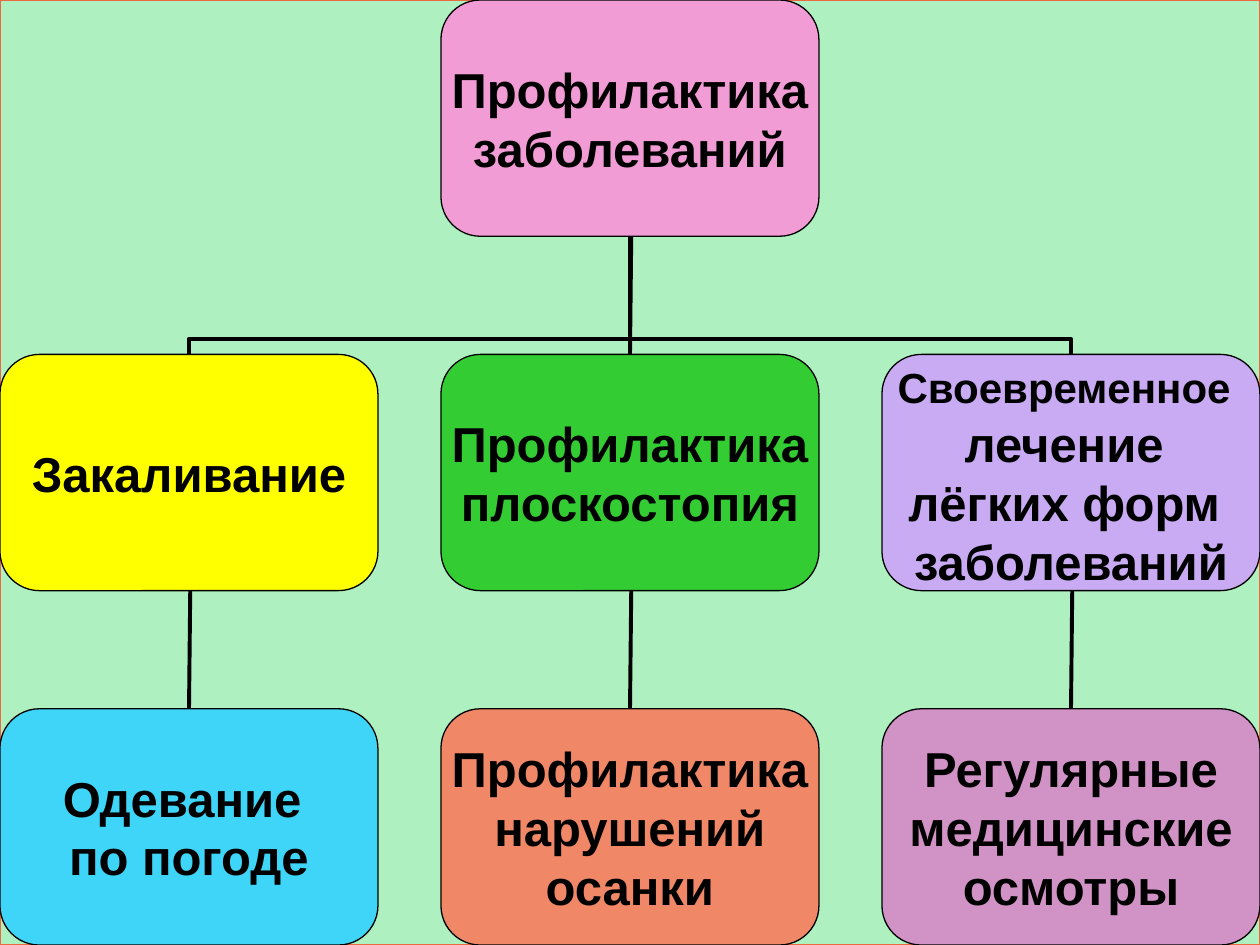
from lxml import etree
from pptx import Presentation
from pptx.dml.color import RGBColor
from pptx.enum.shapes import MSO_CONNECTOR, MSO_SHAPE
from pptx.enum.text import MSO_ANCHOR, PP_ALIGN
from pptx.oxml.ns import qn
from pptx.util import Inches, Pt

STRAIGHT, ELBOW = MSO_CONNECTOR.STRAIGHT, MSO_CONNECTOR.ELBOW
RECTANGLE, ROUNDED = MSO_SHAPE.RECTANGLE, MSO_SHAPE.ROUNDED_RECTANGLE
MIDDLE, CENTER = MSO_ANCHOR.MIDDLE, PP_ALIGN.CENTER

BLACK = RGBColor(0x00, 0x00, 0x00)
MINT = RGBColor(0xAE, 0xF0, 0xBF)
ORANGE = RGBColor(0xEC, 0x69, 0x40)
PINK = RGBColor(0xF2, 0x9C, 0xD5)
YELLOW = RGBColor(0xFF, 0xFF, 0x00)
GREEN = RGBColor(0x33, 0xCC, 0x33)
LAVENDER = RGBColor(0xC8, 0xAB, 0xF3)
SKY = RGBColor(0x3E, 0xD5, 0xF8)
CORAL = RGBColor(0xF0, 0x87, 0x66)
MAUVE = RGBColor(0xD1, 0x93, 0xC5)

PAGE_WIDTH, PAGE_HEIGHT = Inches(10), Inches(7.5)
BOX_WIDTH, BOX_HEIGHT = Inches(3), PAGE_HEIGHT // 4
COLUMN_STEP, ROW_STEP = Inches(3.5), BOX_HEIGHT * 3 // 2
GAP = ROW_STEP - BOX_HEIGHT
SLANT = Inches(0.01)
BEND = 0.133

FRAME_FORMAT = {
    "margin_left": 0, "margin_right": 0, "margin_top": 0, "margin_bottom": 0,
    "word_wrap": False, "vertical_anchor": MIDDLE,
}
FONT_FORMAT = {"name": "Arial", "size": Pt(28), "bold": True}

NODES = [
    (1, 0, PINK, [[" Профилактика "], ["заболеваний"]]),
    (0, 1, YELLOW, [["Закаливание"]]),
    (1, 1, GREEN, [[" Профилактика "], ["плоскостопия"]]),
    (2, 1, LAVENDER, [[("Своевременное", Pt(24)), " "], ["лечение "],
                      ["лёгких форм "], ["заболеваний"]]),
    (0, 2, SKY, [["Одевание "], ["по погоде"]]),
    (1, 2, CORAL, [["Профилактика"], [" нарушений "], ["осанки"]]),
    (2, 2, MAUVE, [["Регулярные"], ["медицинские"], ["осмотры"]]),
]


def apply_format(target, values):
    """Set each named attribute on the target."""
    for name, value in values.items():
        setattr(target, name, value)


def add_box(page, kind, place, fill, line):
    """Add a filled, thinly outlined shape without a shadow."""
    box = page.shapes.add_shape(kind, *place)
    box.shadow.inherit = False
    box.fill.solid()
    box.fill.fore_color.rgb = fill
    box.line.color.rgb = line
    box.line.width = Pt(0.75)
    return box


def add_node(page, place, fill, lines):
    """Add a rounded box with one centred paragraph for each line."""
    box = add_box(page, ROUNDED, place, fill, BLACK)
    box.adjustments[0] = 0.167
    frame = box.text_frame
    apply_format(frame, FRAME_FORMAT)
    for index, spans in enumerate(lines):
        para = frame.add_paragraph() if index else frame.paragraphs[0]
        para.alignment = CENTER
        for part in spans:
            text, size = part if isinstance(part, tuple) else (part, Pt(28))
            span = para.add_run()
            span.text = text
            apply_format(span.font, {**FONT_FORMAT, "size": size})
            span.font.color.rgb = BLACK


def add_link(page, kind, start, end):
    """Add a black connector without a shadow."""
    link = page.shapes.add_connector(kind, *start, *end)
    link.line.color.rgb = BLACK
    link.line.width = Pt(2.25)
    etree.SubElement(link._element.spPr, qn("a:effectLst"))
    return link


def add_elbow(page, start, end):
    """Add an elbow that leaves its start upwards and bends near it."""
    center_x, center_y = (start[0] + end[0]) // 2, (start[1] + end[1]) // 2
    half_width = (start[1] - end[1]) // 2
    half_height = abs(start[0] - end[0]) // 2
    from_right = start[0] > end[0]
    reach = half_width if from_right else -half_width
    link = add_link(page, ELBOW,
                    (center_x + reach, center_y - half_height),
                    (center_x - reach, center_y + half_height))
    properties = link._element.spPr
    turn = 90 if from_right else 270
    properties.find(qn("a:xfrm")).set("rot", str(turn * 60000))
    geometry = properties.find(qn("a:prstGeom"))
    guides = geometry.find(qn("a:avLst"))
    if guides is None:
        guides = etree.SubElement(geometry, qn("a:avLst"))
    etree.SubElement(guides, qn("a:gd"), name="adj1", fmla=f"val {round(BEND * 100000)}")


def add_chart_tree(page, left, top):
    """Place the links and then the boxes of the organisation chart."""
    centers = [left + column * COLUMN_STEP + BOX_WIDTH // 2 for column in range(3)]
    middle_top, bottom_top = top + ROW_STEP, top + 2 * ROW_STEP
    for x in reversed(centers):
        add_link(page, STRAIGHT, (x, bottom_top), (x + SLANT, bottom_top - GAP))
    root = (centers[1], middle_top - GAP)
    add_elbow(page, (centers[2], middle_top), root)
    add_link(page, STRAIGHT, (centers[1], middle_top), (root[0] + SLANT, root[1]))
    add_elbow(page, (centers[0], middle_top), root)
    for column, row, fill, lines in NODES:
        place = (left + column * COLUMN_STEP, top + row * ROW_STEP, BOX_WIDTH, BOX_HEIGHT)
        add_node(page, place, fill, lines)


def main():
    """Build the disease prevention slide."""
    deck = Presentation()
    deck.slide_width, deck.slide_height = PAGE_WIDTH, PAGE_HEIGHT
    page = deck.slides.add_slide(deck.slide_layouts[6])
    add_box(page, RECTANGLE, (0, 0, PAGE_WIDTH, PAGE_HEIGHT), MINT, ORANGE)
    add_chart_tree(page, 0, 0)
    deck.save("out.pptx")


if __name__ == "__main__":
    main()
